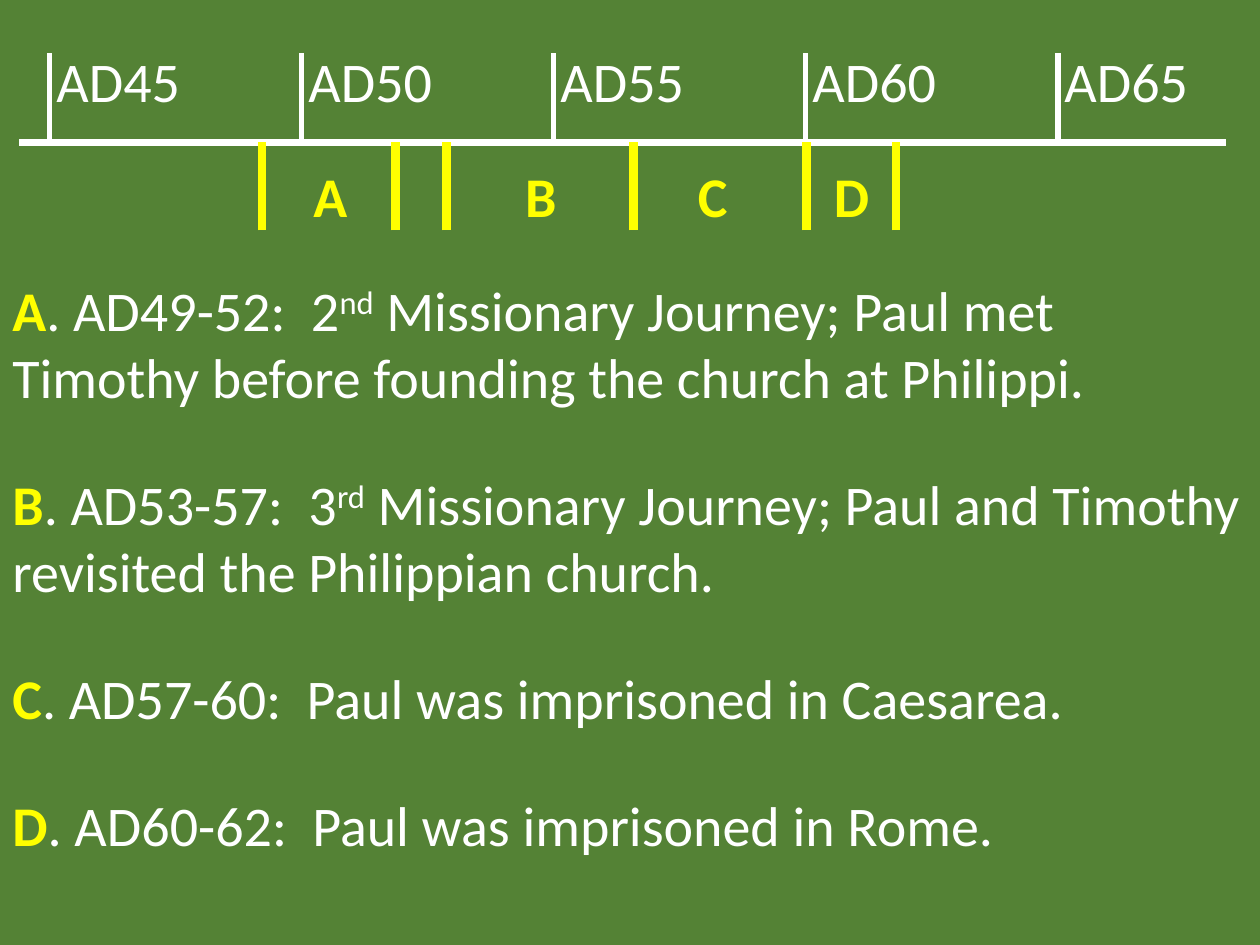
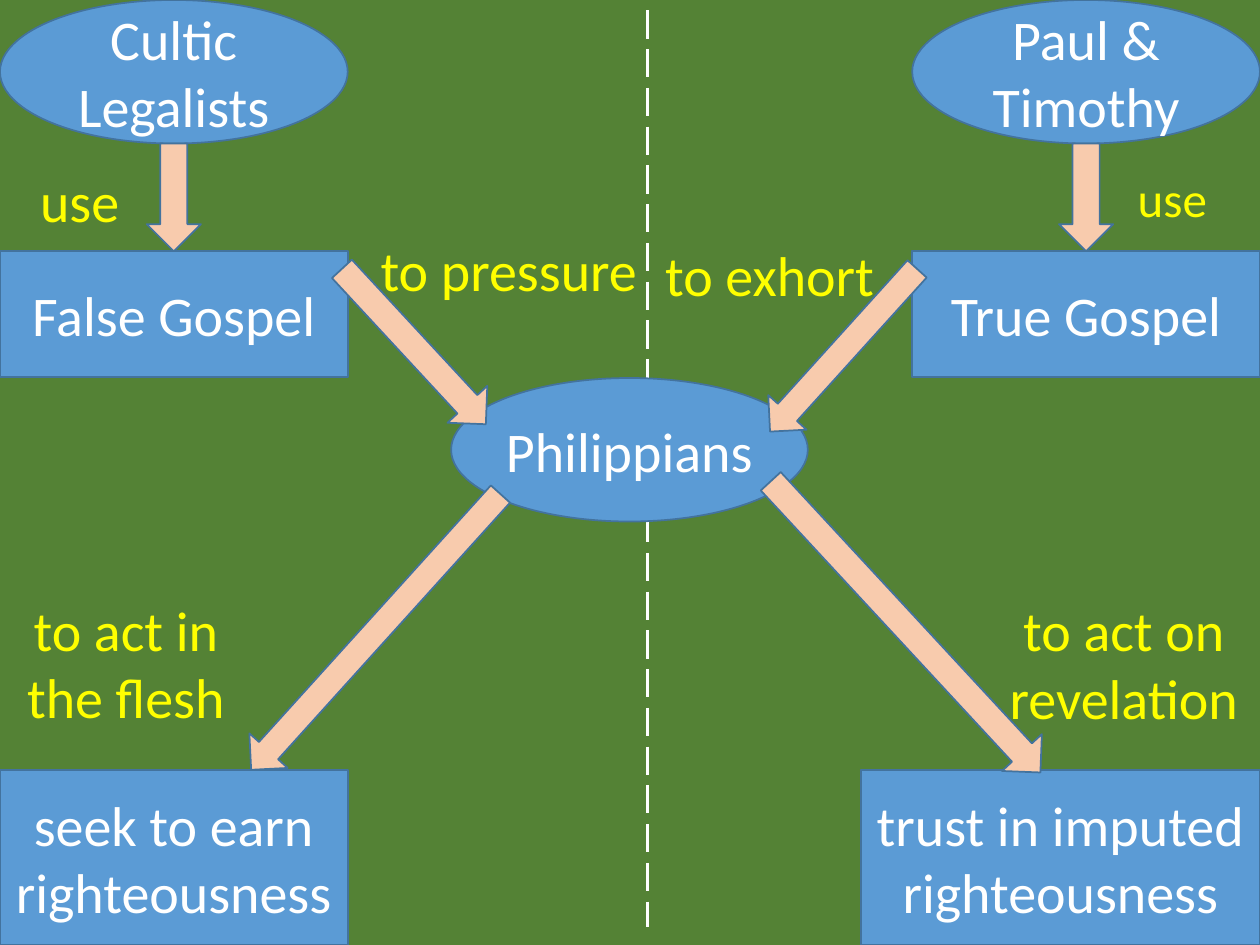
from dataclasses import dataclass

from lxml.etree import SubElement
from pptx import Presentation
from pptx.dml.color import RGBColor
from pptx.enum.dml import MSO_LINE
from pptx.enum.shapes import MSO_CONNECTOR, MSO_SHAPE as Preset
from pptx.enum.text import MSO_ANCHOR, MSO_AUTO_SIZE, PP_ALIGN as Align
from pptx.oxml.ns import qn
from pptx.util import Pt


@dataclass(frozen=True)
class Theme:
    font: str = "Calibri"
    ground: RGBColor = RGBColor.from_string("548235")
    plain: RGBColor = RGBColor.from_string("FFFFFF")
    accent: RGBColor = RGBColor.from_string("FFFF00")
    node: RGBColor = RGBColor.from_string("5B9BD5")
    arrow: RGBColor = RGBColor.from_string("F8CBAD")
    outline: RGBColor = RGBColor.from_string("43739E")
    text_size: int = 32
    small_size: int = 28
    entry_gap: int = 34


class Builder:
    """Draws styled elements on the current slide."""

    def __init__(self, theme):
        self.theme = theme
        self.deck = Presentation()
        self.deck.slide_width, self.deck.slide_height = Pt(720), Pt(540)
        self.page = None

    def new_page(self):
        self.page = self.deck.slides.add_slide(self.deck.slide_layouts[6])
        fill = self.page.background.fill
        fill.solid()
        fill.fore_color.rgb = self.theme.ground

    def style(self, span, color, size=None, bold=False):
        span.font.name = self.theme.font
        span.font.size = Pt(size or self.theme.text_size)
        span.font.bold = bold
        span.font.color.rgb = color

    def line(self, x1, y1, x2, y2, color, width, dash=None):
        line = self.page.shapes.add_connector(
            MSO_CONNECTOR.STRAIGHT, Pt(x1), Pt(y1), Pt(x2), Pt(y2))
        line.line.color.rgb = color
        line.line.width = Pt(width)
        if dash:
            line.line.dash_style = dash
        SubElement(line._element.spPr, qn("a:effectLst"))

    def text_box(self, left, top, width, height, wrap=True):
        box = self.page.shapes.add_textbox(Pt(left), Pt(top), Pt(width), Pt(height))
        box.text_frame.word_wrap = wrap
        box.text_frame.auto_size = MSO_AUTO_SIZE.SHAPE_TO_FIT_TEXT
        return box.text_frame

    def label(self, text, left, top, width, height=46, size=None,
              color=None, bold=False, align=Align.LEFT, wrap=False):
        frame = self.text_box(left, top, width, height, wrap)
        frame.text = text
        para = frame.paragraphs[0]
        para.alignment = align
        self.style(para.runs[0], color or self.theme.accent, size, bold)
        return para

    def scale_labels(self, texts, left, top, width, step):
        para = self.label("\t".join(texts), left, top, width,
                          color=self.theme.plain, wrap=True)
        stops = SubElement(para._p.get_or_add_pPr(), qn("a:tabLst"))
        for number in range(1, len(texts)):
            SubElement(stops, qn("a:tab"), pos=str(Pt(step * number)), algn="l")

    def entries(self, items, left, top, width, height):
        frame = self.text_box(left, top, width, height)
        for number, (letter, lead, suffix, rest) in enumerate(items):
            para = frame.add_paragraph() if number else frame.paragraphs[0]
            if number:
                para.space_before = Pt(self.theme.entry_gap)
            para.text = letter
            self.style(para.runs[0], self.theme.accent, bold=True)
            for text in filter(None, (lead, suffix, rest)):
                span = para.add_run()
                span.text = text
                self.style(span, self.theme.plain)
                if text == suffix:
                    span._r.get_or_add_rPr().set("baseline", "30000")

    def shape(self, preset, left, top, width, height, color):
        shape = self.page.shapes.add_shape(
            preset, Pt(left), Pt(top), Pt(width), Pt(height))
        shape.shadow.inherit = False
        shape.fill.solid()
        shape.fill.fore_color.rgb = color
        shape.line.color.rgb = self.theme.outline
        shape.line.width = Pt(1)
        return shape

    def node(self, preset, text, left, top, width, height):
        frame = self.shape(preset, left, top, width, height, self.theme.node).text_frame
        frame.word_wrap = True
        frame.vertical_anchor = MSO_ANCHOR.MIDDLE
        if preset == Preset.OVAL:
            frame.margin_left = frame.margin_right = 0
            frame.margin_top = frame.margin_bottom = 0
        frame.text = text
        para = frame.paragraphs[0]
        para.alignment = Align.CENTER
        self.style(para.runs[0], self.theme.plain)

    def arrow(self, left, top, width, height, rotation=0):
        arrow = self.shape(Preset.DOWN_ARROW, left, top, width, height, self.theme.arrow)
        arrow.rotation = rotation


def timeline_page(build):
    theme = build.theme
    axis, step = 81.2, 144.1
    build.new_page()
    build.line(11, axis, 700.5, axis, theme.plain, 4)
    years = [f"AD{year}" for year in range(45, 70, 5)]
    build.scale_labels(years, 25.2, 23, 662, 144)
    for number in range(len(years)):
        x = 28.2 + step * number
        build.line(x, axis, x, 30.2, theme.plain, 3)
    for x in (149.8, 226, 255, 362, 461, 512):
        build.line(x, axis + 50.4, x, axis, theme.accent, 5)
    for letter, left in zip("ABCD", (172, 293, 391.7, 469.4)):
        build.label(letter, left, 89, 50, bold=True, wrap=True)
    build.entries([
        ("A", ". AD49-52:  2", "nd", " Missionary Journey; Paul met Timothy "
         "before founding the church at Philippi."),
        ("B", ". AD53-57:  3", "rd", " Missionary Journey; Paul and Timothy "
         "revisited the Philippian church."),
        ("C", ". AD57-60:  Paul was imprisoned in Caesarea.", "", ""),
        ("D", ". AD60-62:  Paul was imprisoned in Rome.", "", ""),
    ], 0, 154, 720, 342)


def gospel_page(build):
    theme = build.theme
    side, right = 198.7, 521.3
    build.new_page()
    build.line(370, 6, 370, 530, theme.plain, 2, MSO_LINE.LONG_DASH)
    for left, people, gospel in ((0, "Cultic Legalists", "False Gospel"),
                                 (right, "Paul & Timothy", "True Gospel")):
        build.node(Preset.OVAL, people, left, 0, side, 82)
        build.node(Preset.RECTANGLE, gospel, left, 143.6, side, 72)
        build.arrow(left + side / 2 - 15.5, 82, 31, 61.6)
    build.node(Preset.OVAL, "Philippians", 257.8, 216, 203.8, 82)
    build.node(Preset.RECTANGLE, "seek to earn righteousness", 0, 440, side, 100)
    build.node(Preset.RECTANGLE, "trust in imputed righteousness", 492, 440, 228, 100)
    to_right, to_left = 317.2, 42.1
    for left, top, width, height, rotation in (
            (221, 137.5, 31, 121, to_right), (467.3, 137.5, 29.5, 125.3, to_left),
            (200, 254.9, 29.5, 212.4, to_left), (502, 244.8, 31, 226.8, to_right)):
        build.arrow(left, top, width, height, rotation)
    build.label("use", 15.8, 91.4, 68.4)
    build.label("use", 643, 92.9, 68.4, 41, theme.small_size)
    build.label("to pressure", 210.4, 131, 161.3)
    build.label("to exhort", 373, 133.9, 136)
    build.label("to act in the flesh", 0, 336.5, 144, 85, align=Align.CENTER, wrap=True)
    build.label("to act on revelation", 564.2, 337, 156, 85, align=Align.CENTER, wrap=True)


def main():
    build = Builder(Theme())
    timeline_page(build)
    gospel_page(build)
    build.deck.save("out.pptx")


if __name__ == "__main__":
    main()
